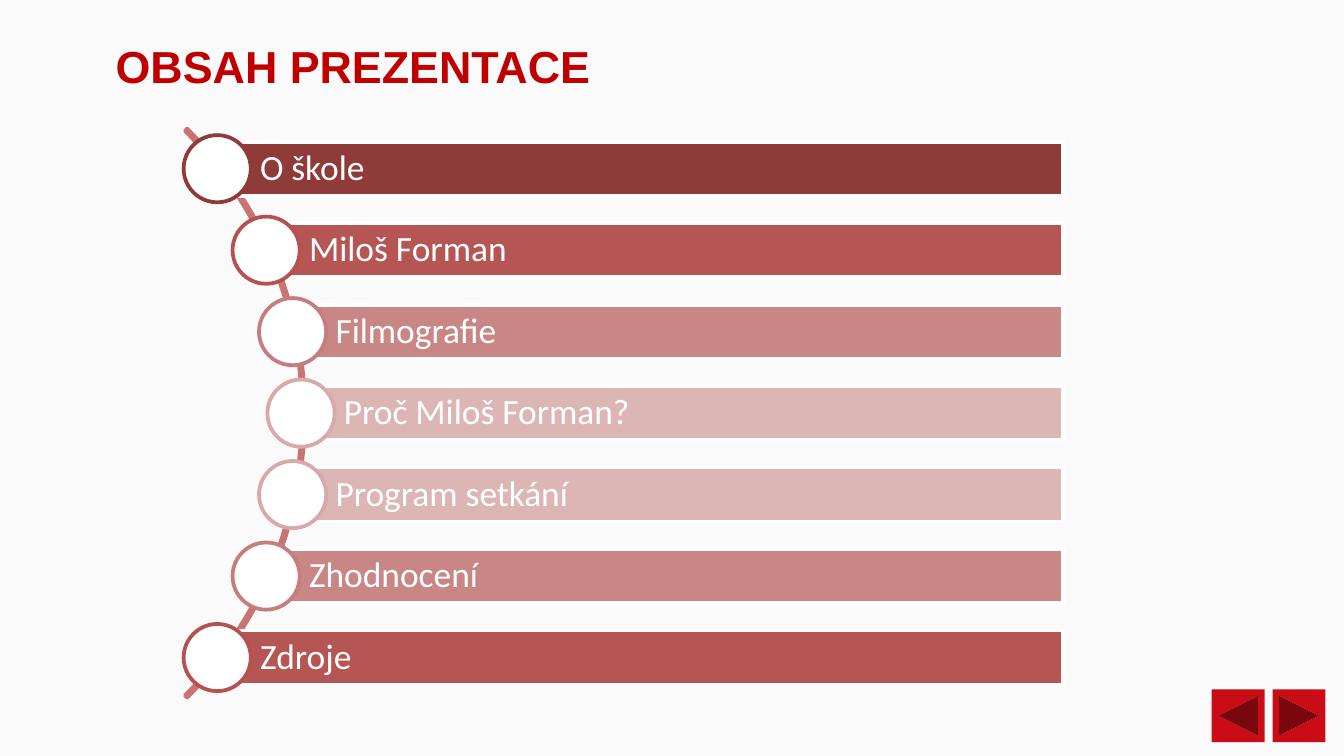
import math
from dataclasses import dataclass

import pptx
import pptx.dml.color
import pptx.enum.shapes
import pptx.enum.text
import pptx.util

Cm = pptx.util.Cm
Pt = pptx.util.Pt
Shape = pptx.enum.shapes.MSO_SHAPE
Align = pptx.enum.text.PP_ALIGN
Anchor = pptx.enum.text.MSO_ANCHOR


@dataclass
class Topic:
    text: str
    fill: str
    ring: str


DARK = ("8E3B39", "8E3B39")
STRONG = ("B65654", "B5524F")
MEDIUM = ("C88785", "C57E7D")
PALE = ("DCB6B5", "D7A9A8")
TOPICS = [
    Topic("O škole", *DARK),
    Topic("Miloš Forman", *STRONG),
    Topic("Filmografie", *MEDIUM),
    Topic("Proč Miloš Forman?", *PALE),
    Topic("Program setkání", *PALE),
    Topic("Zhodnocení", *MEDIUM),
    Topic("Zdroje", *STRONG),
]

# Geometry in centimetres: topics sit on a circle around the arc's centre
CENTER_X, CENTER_Y = -1.84, 7.81
RADIUS = 7.53
ARC_SIZE = 15.21
STEP = 1.54
BAR_HEIGHT = 1.02
BAR_RIGHT = 20.09
DOT_SIZE = 1.27
BUTTON_SIZE = 1.0


def color(value: str) -> pptx.dml.color.RGBColor:
    return pptx.dml.color.RGBColor.from_string(value)


def apply(target, values: dict) -> None:
    for name, value in values.items():
        setattr(target, name, value)


def add_shape(slide, kind, left: float, top: float, width: float, height: float,
              fill: str = "", line: str = ""):
    shape = slide.shapes.add_shape(kind, Cm(left), Cm(top), Cm(width), Cm(height))
    shape.shadow.inherit = False
    if fill:
        shape.fill.solid()
        shape.fill.fore_color.rgb = color(fill)
    else:
        shape.fill.background()
    if line:
        shape.line.color.rgb = color(line)
        shape.line.width = Pt(2)
    else:
        shape.line.fill.background()
    return shape


def set_text(shape, text: str, frame_format: dict, paragraph_format: dict,
             font_format: dict, font_color: str) -> None:
    frame = shape.text_frame
    frame.text = text
    paragraph = frame.paragraphs[0]
    font = paragraph.runs[0].font
    apply(frame, frame_format)
    apply(paragraph, paragraph_format)
    apply(font, font_format)
    font.color.rgb = color(font_color)


def add_title(slide, text: str) -> None:
    title = slide.shapes.title
    apply(title, {"left": Cm(1.17), "top": Cm(0.61), "width": Cm(11), "height": Cm(1.27)})
    set_text(title, text,
             {"word_wrap": False, "vertical_anchor": Anchor.MIDDLE},
             {"alignment": Align.CENTER},
             {"name": "Arial", "size": Pt(24), "bold": True}, "C00000")


def add_arc(slide) -> None:
    arc = add_shape(slide, Shape.BLOCK_ARC, CENTER_X - ARC_SIZE / 2,
                    CENTER_Y - ARC_SIZE / 2, ARC_SIZE, ARC_SIZE, line="C77472")
    for index, value in enumerate((189, 27, 0.004)):
        arc.adjustments[index] = value


def add_topic(slide, topic: Topic, offset: float) -> None:
    x = CENTER_X + math.sqrt(RADIUS ** 2 - offset ** 2)
    y = CENTER_Y + offset
    bar = add_shape(slide, Shape.RECTANGLE, x, y - BAR_HEIGHT / 2,
                    BAR_RIGHT - x, BAR_HEIGHT, topic.fill, "FFFFFF")
    set_text(bar, topic.text,
             {"word_wrap": True, "vertical_anchor": Anchor.MIDDLE,
              "margin_left": Cm(0.81), "margin_right": Cm(0.13),
              "margin_top": Cm(0.13), "margin_bottom": Cm(0.13)},
             {"alignment": Align.LEFT, "line_spacing": 0.9},
             {"name": "Calibri", "size": Pt(19)}, "FFFFFF")
    add_shape(slide, Shape.OVAL, x - DOT_SIZE / 2, y - DOT_SIZE / 2,
              DOT_SIZE, DOT_SIZE, "FFFFFF", topic.ring)


def main() -> None:
    presentation = pptx.Presentation()
    apply(presentation, {"slide_width": Cm(25.4), "slide_height": Cm(14.29)})
    slide = presentation.slides.add_slide(presentation.slide_layouts[5])
    slide.background.fill.solid()
    slide.background.fill.fore_color.rgb = color("FAFAFA")

    # Navigation buttons
    for kind, left in ((Shape.ACTION_BUTTON_FORWARD_OR_NEXT, 24.05),
                       (Shape.ACTION_BUTTON_BACK_OR_PREVIOUS, 22.9)):
        add_shape(slide, kind, left, 13.03, BUTTON_SIZE, BUTTON_SIZE, "CA0C16")

    add_title(slide, "OBSAH PREZENTACE")

    # Contents along the arc
    add_arc(slide)
    middle = (len(TOPICS) - 1) / 2
    for row, topic in enumerate(TOPICS):
        add_topic(slide, topic, (row - middle) * STEP)

    presentation.save("out.pptx")


if __name__ == "__main__":
    main()
